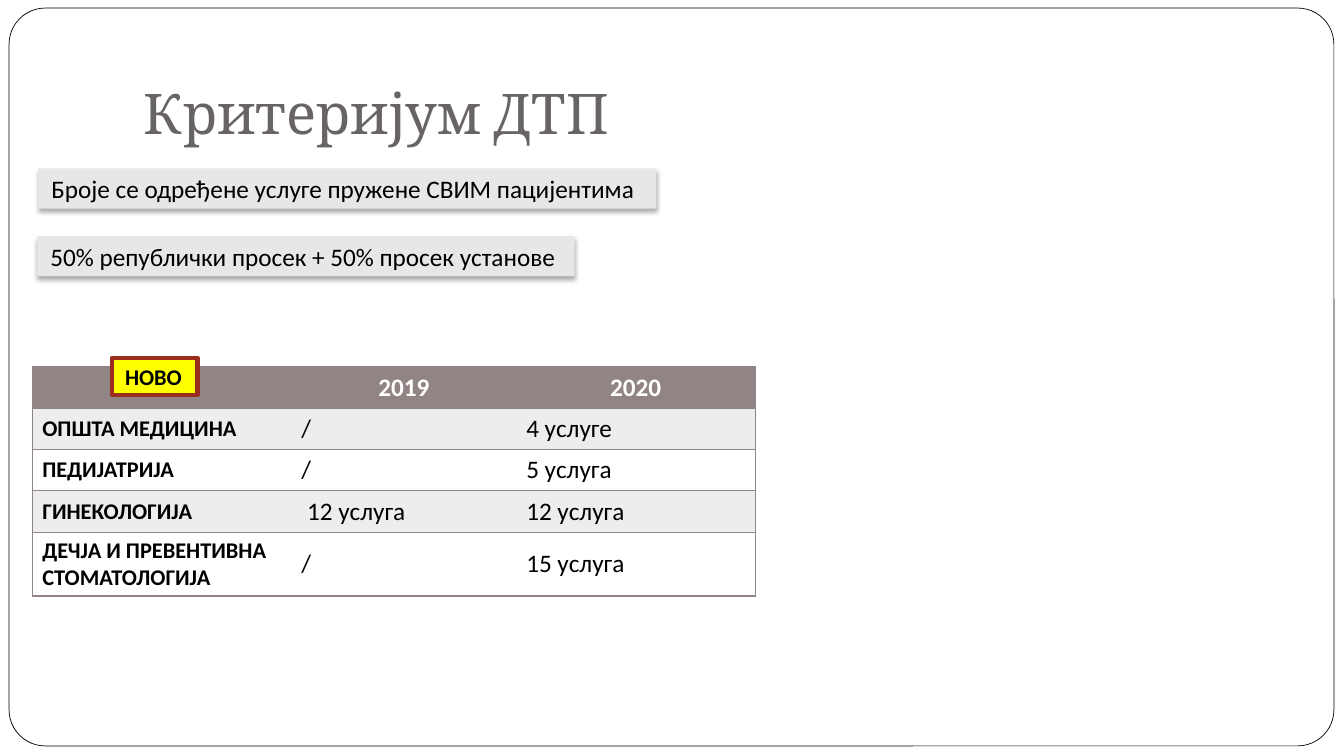
import pptx
import pptx.util
import pptx.oxml
import pptx.dml.color
import pptx.enum.shapes
import pptx.enum.text
from pptx.util import Inches

NAMESPACE = 'xmlns:a="http://schemas.openxmlformats.org/drawingml/2006/main"'
SHAPES = pptx.enum.shapes.MSO_SHAPE
ANCHOR = pptx.enum.text.MSO_ANCHOR
ALIGN = pptx.enum.text.PP_ALIGN


def color(value):
    return pptx.dml.color.RGBColor.from_string(value)


def write(frame, text, size, ink="000000", font="Calibri", bold=False, align=ALIGN.LEFT):
    para = frame.paragraphs[0]
    para.alignment = align
    span = para.add_run()
    span.text = text
    formats = {"size": pptx.util.Pt(size), "name": font, "bold": bold}
    for name, value in formats.items():
        setattr(span.font, name, value)
    span.font.color.rgb = color(ink)


deck = pptx.Presentation()
deck.slide_width = Inches(13.33)
deck.slide_height = Inches(7.5)
page = deck.slides.add_slide(deck.slide_layouts[6])

# Rounded page frame
border = page.shapes.add_shape(SHAPES.ROUNDED_RECTANGLE, Inches(0.09), Inches(0.08),
                               Inches(13.14), Inches(7.32))
border.adjustments[0] = 0.049
border.shadow.inherit = False
border.fill.solid()
border.fill.fore_color.rgb = color("FFFFFF")
border.line.color.rgb = color("000000")
border.line.width = pptx.util.Pt(0.5)

# Title
title = page.shapes.add_textbox(Inches(1.33), Inches(0.3), Inches(11.33), Inches(1.25))
title_format = {"word_wrap": True, "vertical_anchor": ANCHOR.BOTTOM,
                "margin_bottom": Inches(0.1)}
for name, value in title_format.items():
    setattr(title.text_frame, name, value)
write(title.text_frame, "Критеријум ДТП", 40, "696464", "Cambria")

# Table of services by branch
rows = [
    ("", "2019", "2020"),
    ("ОПШТА МЕДИЦИНА", "/", "4 услуге"),
    ("ПЕДИЈАТРИЈА", "/", "5 услуга"),
    ("ГИНЕКОЛОГИЈА", " 12 услуга", "12 услуга"),
    ("ДЕЧЈА И ПРЕВЕНТИВНА СТОМАТОЛОГИЈА", "/", "15 услуга"),
]
widths = [2.57, 2.23, 2.37]
heights = [0.41] * 4 + [0.62]
table = page.shapes.add_table(len(rows), len(widths), Inches(0.32), Inches(3.64),
                              Inches(sum(widths)), Inches(sum(heights))).table
# Plain style without grid lines
table._tbl.tblPr[0].text = "{2D5ABB26-0587-4C30-8999-92F81FD0307C}"
for column, width in zip(table.columns, widths):
    column.width = Inches(width)

for r, texts in enumerate(rows):
    table.rows[r].height = Inches(heights[r])
    for c, text in enumerate(texts):
        cell = table.cell(r, c)
        cell.vertical_anchor = ANCHOR.MIDDLE
        sides = {0: ["L"], len(widths) - 1: ["R"]}.get(c, []) + ["T", "B"]
        for side in sides:
            cell._tc.get_or_add_tcPr().append(pptx.oxml.parse_xml(
                f'<a:ln{side} {NAMESPACE} w="12700"><a:solidFill>'
                f'<a:srgbClr val="918485"/></a:solidFill></a:ln{side}>'))
        cell.fill.solid()
        band = "EEEDED" if r % 2 else "FFFFFF"
        cell.fill.fore_color.rgb = color("918485" if r == 0 else band)
        if r == 0 and text:
            write(cell.text_frame, text, 18, "FFFFFF", bold=True, align=ALIGN.CENTER)
        elif text:
            write(cell.text_frame, text, 16 if c == 0 else 18, bold=c == 0)

# Grey notes with a soft shadow, and the yellow tag on the table
labels = [
    (0.38, 1.67, 6.13, 0.4, "Броје се одређене услуге пружене СВИМ пацијентима", "E9E6E7", None, 18),
    (0.37, 2.34, 5.33, 0.4, "50% републички просек + 50% просек установе", "E9E6E7", None, 18),
    (1.11, 3.55, 0.85, 0.37, "НОВО", "FFFF00", "9B2D1F", 16),
]
for left, top, width, height, text, fill, outline, size in labels:
    box = page.shapes.add_shape(SHAPES.RECTANGLE, Inches(left), Inches(top),
                                Inches(width), Inches(height))
    box.shadow.inherit = False
    box.fill.solid()
    box.fill.fore_color.rgb = color(fill)
    if outline:
        box.line.color.rgb = color(outline)
        box.line.width = pptx.util.Pt(3)
    else:
        box.line.fill.background()
        effects = box._element.spPr.find(
            "{http://schemas.openxmlformats.org/drawingml/2006/main}effectLst")
        effects.append(pptx.oxml.parse_xml(
            f'<a:outerShdw {NAMESPACE} blurRad="44450" dist="27940" dir="5400000" '
            'rotWithShape="0"><a:srgbClr val="000000"><a:alpha val="32000"/>'
            '</a:srgbClr></a:outerShdw>'))
    box_format = {"word_wrap": True, "vertical_anchor": ANCHOR.MIDDLE,
                  "margin_left": Inches(0.13), "margin_right": Inches(0.05)}
    for name, value in box_format.items():
        setattr(box.text_frame, name, value)
    write(box.text_frame, text, size, bold=bool(outline))

deck.save("out.pptx")
